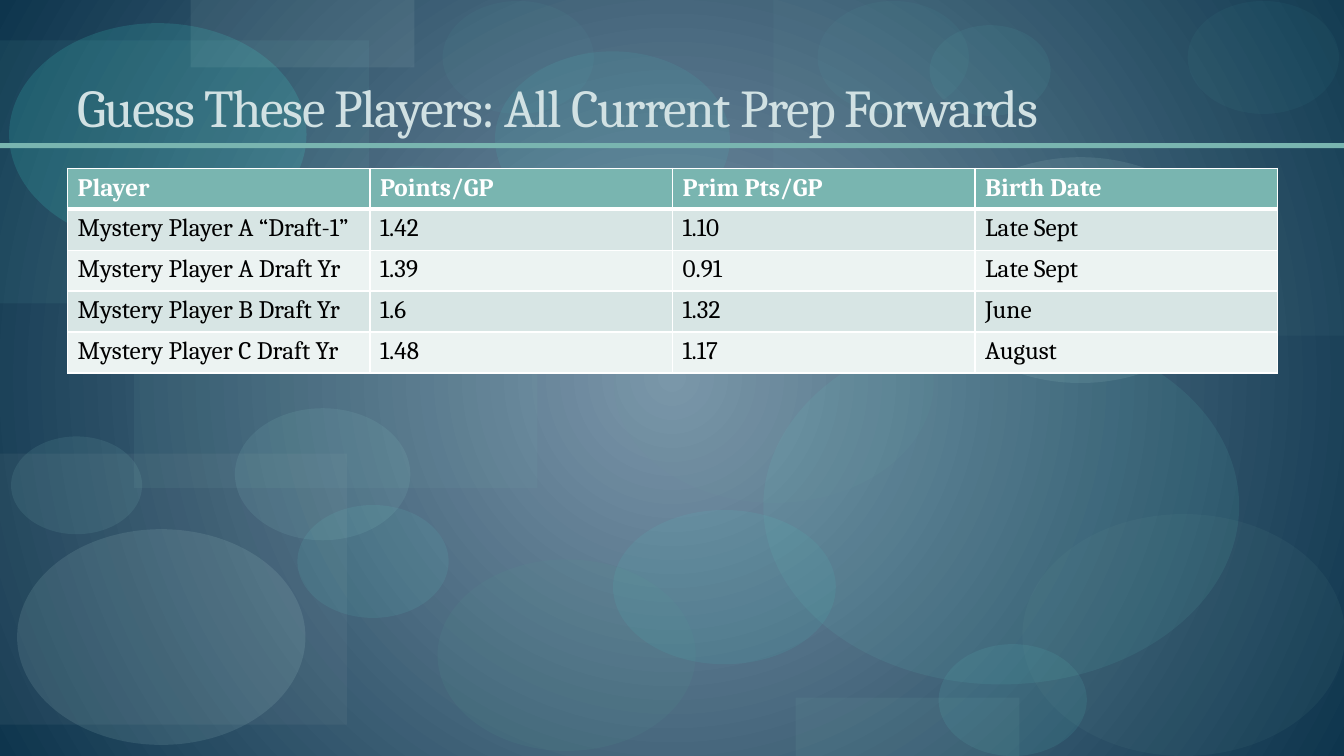
from lxml.etree import SubElement
from pptx import Presentation
from pptx.dml.color import RGBColor
from pptx.enum.shapes import MSO_SHAPE
from pptx.enum.text import MSO_ANCHOR, MSO_AUTO_SIZE, PP_ALIGN
from pptx.oxml.ns import qn
from pptx.util import Inches, Pt

FONT = "Cambria"
TEAL = "79B5B0"
RECT, OVAL = MSO_SHAPE.RECTANGLE, MSO_SHAPE.OVAL

DECOR = [
    (RECT, 1.33, 2.51, 4, 2.33, TEAL, 9),
    (OVAL, 4.34, 5.55, 2.56, 1.9, "549791", 13),
    (RECT, 7.67, 0, 5.67, 3.33, TEAL, 6),
    (RECT, 0, 4.5, 3.44, 2.69, "B2B7BA", 8),
    (OVAL, 6.09, 2.61, 3.17, 2.38, "70A39E", 8),
    (OVAL, 9.31, 6.39, 1.47, 1.11, "65E8DC", 9),
    (OVAL, 9.22, 1.56, 2.99, 2.24, "C1E8E4", 11),
    (OVAL, 0.17, 5.25, 2.86, 2.14, "C1E8E4", 12),
    (OVAL, 2.95, 5.01, 1.5, 1.12, "65E8DC", 9),
    (OVAL, 6.08, 5.06, 2.21, 1.53, "44EADC", 8),
    (RECT, 0, 0.4, 3.66, 2.61, "77D6CE", 7),
    (RECT, 1.89, 0, 2.22, 0.67, "BED7D4", 10),
    (OVAL, 0.09, 0.23, 2.95, 2.21, "44EADC", 15),
    (OVAL, 0.11, 4.33, 1.3, 0.97, "97DCD6", 10),
    (OVAL, 3.09, 1.65, 2.05, 1.53, "65E8DC", 9),
    (OVAL, 4.91, 0.51, 2.33, 1.74, "44EADC", 8),
    (OVAL, 7.57, 3.25, 4.72, 3.54, "61CDC4", 10),
    (OVAL, 8.11, 0.01, 1.5, 1.12, "65E8DC", 4),
    (OVAL, 10.14, 5.1, 3.2, 2.4, "70A39E", 8),
    (OVAL, 2.33, 4.05, 1.74, 1.31, "97DCD6", 10),
    (OVAL, 9.22, 0.25, 1.2, 0.9, "65E8DC", 6),
    (OVAL, 11.78, 0.01, 1.5, 1.12, "65E8DC", 4),
    (RECT, 7.89, 6.92, 2.22, 0.58, TEAL, 10),
    (OVAL, 4.39, 0.01, 1.5, 1.12, "65E8DC", 4),
    (RECT, 0, 1.42, 13.33, 0.05, TEAL, 100),
]

PLAYERS = [
    ("Player", "Points/GP", "Prim Pts/GP", "Birth Date"),
    ("Mystery Player A “Draft-1”", "1.42", "1.10", "Late Sept"),
    ("Mystery Player A Draft Yr", "1.39", "0.91", "Late Sept"),
    ("Mystery Player B Draft Yr", "1.6", "1.32", "June"),
    ("Mystery Player C Draft Yr", "1.48", "1.17", "August"),
]


def rgb(value):
    """Turn a hex string into a colour."""
    return RGBColor.from_string(value)


def add_run(p, text, size, color, bold=False):
    """Add one formatted run to a paragraph."""
    r = p.add_run()
    r.text = text
    r.font.name, r.font.size, r.font.bold = FONT, Pt(size), bold
    r.font.color.rgb = rgb(color)


def set_background(s, inner, outer):
    """Fill the background with a gradient that spreads from the centre."""
    fill = s.background.fill
    fill.gradient()
    for stop, color, position in zip(fill.gradient_stops, (inner, outer), (0, 1)):
        stop.color.rgb = rgb(color)
        stop.position = position
    grad = s.element.find(".//" + qn("a:gradFill"))
    grad.remove(grad.find(qn("a:lin")))
    circle = SubElement(grad, qn("a:path"), path="circle")
    SubElement(circle, qn("a:fillToRect"), l="50000", t="50000", r="50000", b="50000")


def add_decor(s, x, y):
    """Scatter the translucent shapes and the title rule from a corner."""
    for kind, dx, dy, w, h, color, opacity in DECOR:
        sp = s.shapes.add_shape(kind, Inches(x + dx), Inches(y + dy), Inches(w), Inches(h))
        sp.shadow.inherit = False
        sp.line.fill.background()
        sp.fill.solid()
        sp.fill.fore_color.rgb = rgb(color)
        if opacity < 100:
            clr = sp.element.spPr.find(qn("a:solidFill"))[0]
            SubElement(clr, qn("a:alpha"), val=str(opacity * 1000))


def add_title(s, text, x, y, w, h):
    """Place the title above the rule, in front of the decoration."""
    title = s.shapes.title
    s.shapes.element.append(title.element)
    title.left, title.top, title.width, title.height = map(Inches, (x, y, w, h))
    tf = title.text_frame
    tf.word_wrap = True
    tf.auto_size = MSO_AUTO_SIZE.NONE
    tf.vertical_anchor = MSO_ANCHOR.BOTTOM
    p = tf.paragraphs[0]
    p.alignment = PP_ALIGN.LEFT
    add_run(p, text, 38, "D1E1E3")
    title.element.find(".//" + qn("a:rPr")).set("spc", "-100")


def set_borders(cell, top, bottom):
    """Draw white cell borders with the given top and bottom widths."""
    tc_pr = cell._tc.get_or_add_tcPr()
    for side, width in zip("LRTB", (1, 1, top, bottom)):
        ln = SubElement(tc_pr, qn("a:ln" + side), w=str(Pt(width)))
        SubElement(SubElement(ln, qn("a:solidFill")), qn("a:srgbClr"), val="FFFFFF")


def add_players(s, rows, x, y, w, h):
    """Build the player table with a header and banded rows."""
    frame = s.shapes.add_table(len(rows), len(rows[0]), *map(Inches, (x, y, w, h)))
    for i, row in enumerate(rows):
        header = i == 0
        band = TEAL if header else ("ECF3F2", "D7E5E4")[i % 2]
        color = "FFFFFF" if header else "000000"
        for j, text in enumerate(row):
            cell = frame.table.cell(i, j)
            set_borders(cell, 3 if i == 1 else 1, 3 if header else 1)
            cell.fill.solid()
            cell.fill.fore_color.rgb = rgb(band)
            add_run(cell.text_frame.paragraphs[0], text, 18, color, header)


def main():
    """Build and save the slide."""
    prs = Presentation()
    prs.slide_width, prs.slide_height = Inches(13.33), Inches(7.5)
    s = prs.slides.add_slide(prs.slide_layouts[5])
    set_background(s, "7B96AA", "0E354D")
    add_decor(s, 0, 0)
    add_title(s, "Guess These Players: All Current Prep Forwards", 0.67, 0.17, 12, 1.25)
    add_players(s, PLAYERS, 0.67, 1.67, 12, 2.03)
    prs.save("out.pptx")


if __name__ == "__main__":
    main()
